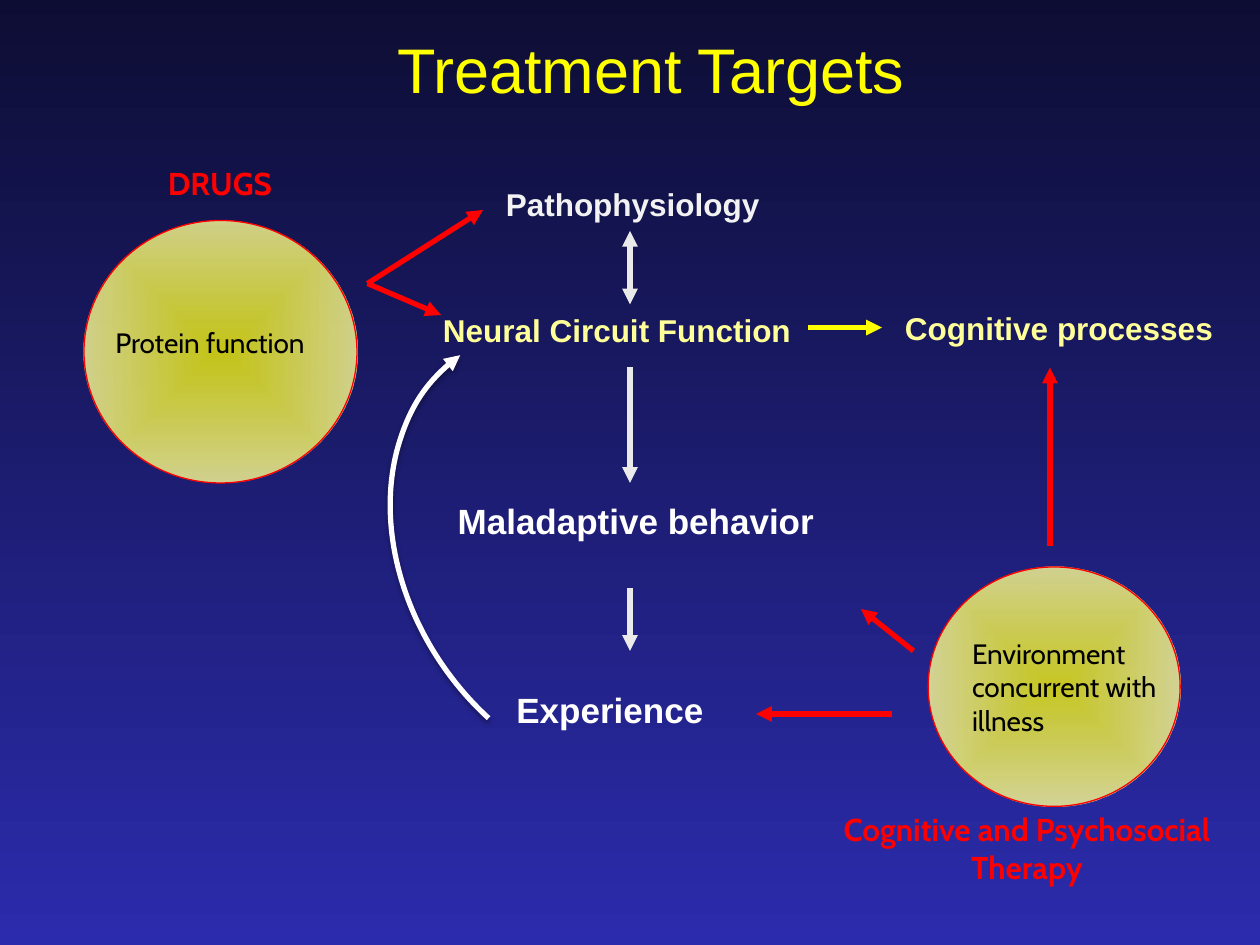
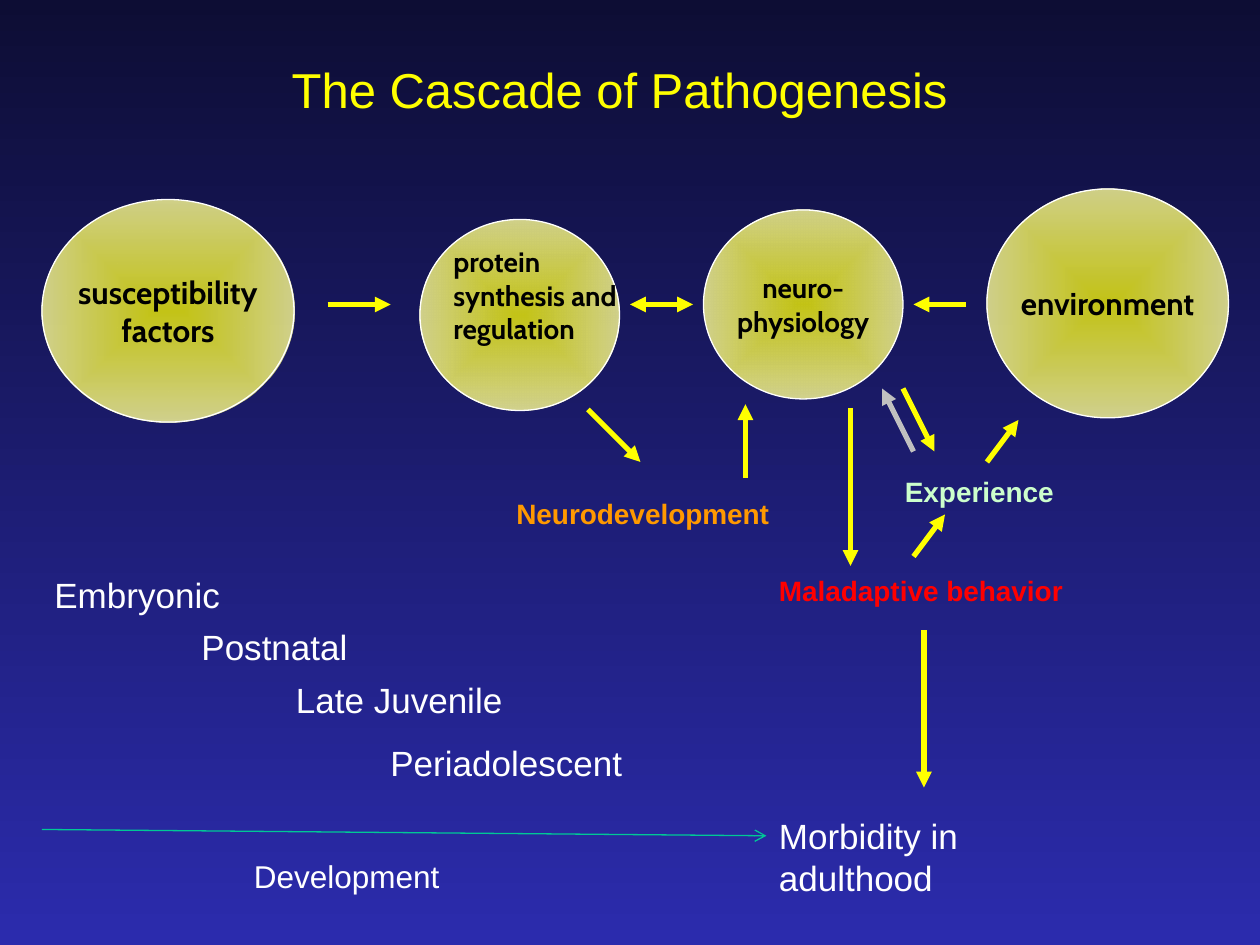
"""Build two slides on treatment targets and the cascade of pathogenesis."""
from dataclasses import dataclass

from pptx import Presentation
from pptx.dml.color import RGBColor
from pptx.enum.shapes import MSO_CONNECTOR, MSO_SHAPE
from pptx.enum.text import MSO_ANCHOR, MSO_AUTO_SIZE, PP_ALIGN
from pptx.oxml import parse_xml
from pptx.oxml.ns import nsdecls, qn
from pptx.util import Emu, Inches, Pt

ELLIPSE, ARC = MSO_SHAPE.OVAL, MSO_SHAPE.ARC
STRAIGHT = MSO_CONNECTOR.STRAIGHT
MIDDLE, TOP = MSO_ANCHOR.MIDDLE, MSO_ANCHOR.TOP
LEFT, CENTER = PP_ALIGN.LEFT, PP_ALIGN.CENTER
GROW = MSO_AUTO_SIZE.SHAPE_TO_FIT_TEXT

SLIDE_WIDTH, SLIDE_HEIGHT = Inches(10), Inches(7.5)
COLUMNS = 120
CELL = SLIDE_WIDTH / COLUMNS
TITLE_SIZE = (108, 15)
COLORS = {
    "night": "0D0D34",
    "indigo": "2B2BAD",
    "yellow": "FFFF00",
    "cream": "FFFF99",
    "red": "FF0000",
    "white": "FFFFFF",
    "mist": "F2F2F2",
    "pale": "EAEAEA",
    "silver": "C0C0C0",
    "orange": "FF9900",
    "mint": "CCFFCC",
    "teal": "00C896",
    "black": "000000",
}


@dataclass(frozen=True)
class Label:
    """Text at a grid place; its height follows from its lines."""

    text: str
    left: float
    top: float
    width: float
    size: int
    color: str = "white"
    bold: bool = True
    font: str = "Arial"
    align: PP_ALIGN = LEFT
    wrap: bool = False
    lines: int = 1


@dataclass(frozen=True)
class Circle:
    """Glowing ellipse with an optional centred caption."""

    left: float
    top: float
    width: float
    height: float
    outline: str
    caption: str = ""
    size: int = 18


@dataclass(frozen=True)
class Arrow:
    """Straight arrow between two grid points."""

    start: tuple[float, float]
    end: tuple[float, float]
    color: str = "yellow"
    double: bool = False
    weight: float = 3
    tip: str = "triangle"


@dataclass(frozen=True)
class Diagram:
    """Everything that stands on one slide."""

    title: str
    title_place: tuple[float, float]
    title_size: int
    circles: list[Circle]
    labels: list[Label]
    arrows: list[Arrow]


TREATMENT = Diagram(
    "Treatment Targets", (8, -1), 36,
    [
        Circle(8, 21, 26, 25, "red"),
        Circle(88.4, 54, 24, 22.8, "red"),
    ],
    [
        Label("Protein function", 9.8, 30.4, 25.1, 16, "black", False, "Cabin", wrap=True),
        Label("Environment\nconcurrent with\nillness", 91.4, 60, 21.6, 16,
              "black", False, "Cabin", lines=3),
        Label("DRUGS", 14.8, 15, 13.2, 18, "red", font="Cabin"),
        Label("Cognitive and Psychosocial\nTherapy", 76, 76.6, 43.6, 18, "red",
              font="Cabin", align=CENTER, lines=2),
        Label("Pathophysiology", 47, 17, 26.9, 18, "mist"),
        Label("Neural Circuit Function", 41, 29, 35.9, 18, "cream"),
        Label("Cognitive processes", 85, 28.8, 32, 18, "cream"),
        Label("Maladaptive behavior", 42.4, 47, 36.6, 20),
        Label("Experience", 48, 65, 20.4, 20),
    ],
    [
        Arrow((35, 27), (46, 20), "red"),
        Arrow((35, 27), (42, 30), "red"),
        Arrow((60, 29), (60, 22), "pale", double=True),
        Arrow((60, 35), (60, 46), "pale"),
        Arrow((60, 56), (60, 62), "pale"),
        Arrow((77, 31.2), (84, 31.2)),
        Arrow((100, 52), (100, 35), "red"),
        Arrow((87, 62), (82, 58), "red"),
        Arrow((85, 68), (72, 68), "red"),
    ],
)

CASCADE = Diagram(
    "The Cascade of Pathogenesis", (5, 1), 28,
    [
        Circle(4, 19, 24, 21.2, "white", "susceptibility\nfactors"),
        Circle(40, 20.9, 19, 18.2, "white"),
        Circle(67, 20, 19, 18, "white", "neuro-\nphysiology", 16),
        Circle(94, 18, 23, 21.8, "white", "environment"),
    ],
    [
        Label("protein synthesis and regulation", 42, 22.7, 18, 16, "black",
              font="Cabin", wrap=True, lines=3),
        Label("Neurodevelopment", 48, 46.7, 27.6, 16, "orange"),
        Label("Experience", 85, 44.6, 16.8, 16, "mint"),
        Label("Maladaptive behavior", 73, 54, 29.5, 16, "red"),
        Label("Embryonic", 4, 54, 19.2, 20, bold=False),
        Label("Postnatal", 18, 59, 17.4, 20, bold=False),
        Label("Late Juvenile", 27, 64, 23.2, 20, bold=False),
        Label("Periadolescent", 36, 70, 25.7, 20, bold=False),
        Label("Morbidity in adulthood", 73, 77, 30, 20, bold=False, wrap=True, lines=2),
        Label("Development", 23, 81, 20.3, 18, bold=False),
    ],
    [
        Arrow((31.2, 29), (37.2, 29)),
        Arrow((60, 29), (66, 29), double=True),
        Arrow((92, 29), (87, 29)),
        Arrow((56, 39), (61, 44)),
        Arrow((71, 45.5), (71, 38.5)),
        Arrow((81, 38.9), (81, 53.9)),
        Arrow((87, 43), (84, 37), "silver"),
        Arrow((86, 37), (89, 43)),
        Arrow((87, 53), (90, 49)),
        Arrow((94, 44), (97, 40)),
        Arrow((88, 60), (88, 75)),
        Arrow((4, 79), (73, 79.6), "teal", weight=0.75, tip="arrow"),
    ],
)


def cells(*counts: float) -> list[Emu]:
    """Turn grid cells into lengths."""
    return [Emu(round(count * CELL)) for count in counts]


def rgb(name: str) -> RGBColor:
    """Look up a named colour."""
    return RGBColor.from_string(COLORS[name])


def apply_format(target, values: dict) -> None:
    """Set each attribute named in the dict."""
    for name, value in values.items():
        setattr(target, name, value)


def write_text(frame, text: str, align: PP_ALIGN, font: dict, color: str) -> None:
    """Fill a text frame, one paragraph a line."""
    frame.text = text
    for paragraph in frame.paragraphs:
        paragraph.alignment = align
        for run in paragraph.runs:
            apply_format(run.font, font)
            run.font.color.rgb = rgb(color)


def set_line(line, color: str, weight: float) -> None:
    """Colour and size a line."""
    line.color.rgb = rgb(color)
    line.width = Pt(weight)


def add_tips(shape, **tips: str) -> None:
    """Put arrowheads on the ends of a line."""
    outline = shape.element.spPr.find(qn("a:ln"))
    for end, kind in tips.items():
        outline.append(parse_xml(f'<a:{end} {nsdecls("a")} type="{kind}"/>'))


def draw_label(slide, label: Label) -> None:
    """Draw a text box."""
    left, top, width = cells(label.left, label.top, label.width)
    height = Inches(0.1) + Pt(1.2 * label.size * label.lines)
    frame = slide.shapes.add_textbox(left, top, width, height).text_frame
    apply_format(frame, {"word_wrap": label.wrap, "auto_size": GROW, "vertical_anchor": TOP})
    font = {"name": label.font, "size": Pt(label.size), "bold": label.bold}
    write_text(frame, label.text, label.align, font, label.color)


def draw_circle(slide, circle: Circle) -> None:
    """Draw an ellipse that fades from its centre."""
    place = cells(circle.left, circle.top, circle.width, circle.height)
    shape = slide.shapes.add_shape(ELLIPSE, *place)
    stops = "".join(
        f'<a:gs pos="{position}"><a:srgbClr val="{COLORS[color]}">'
        f'<a:alpha val="{alpha}"/></a:srgbClr></a:gs>'
        for position, color, alpha in ((0, "yellow", 74000), (100000, "cream", 80000))
    )
    shape.element.spPr.append(parse_xml(
        f'<a:gradFill {nsdecls("a")} rotWithShape="1"><a:gsLst>{stops}</a:gsLst>'
        '<a:path path="shape"><a:fillToRect l="50000" t="50000" r="50000" b="50000"/>'
        '</a:path></a:gradFill>'
    ))
    set_line(shape.line, circle.outline, 0.75)
    shape.shadow.inherit = False
    if circle.caption:
        apply_format(shape.text_frame, {"word_wrap": False, "vertical_anchor": MIDDLE})
        font = {"name": "Cabin", "size": Pt(circle.size), "bold": True}
        write_text(shape.text_frame, circle.caption, CENTER, font, "black")


def draw_arrow(slide, arrow: Arrow) -> None:
    """Draw a straight arrow."""
    connector = slide.shapes.add_connector(STRAIGHT, *cells(*arrow.start, *arrow.end))
    set_line(connector.line, arrow.color, arrow.weight)
    tips = {"headEnd": arrow.tip} if arrow.double else {}
    add_tips(connector, **tips, tailEnd=arrow.tip)
    connector.element.spPr.append(parse_xml(f'<a:effectLst {nsdecls("a")}/>'))


def draw_feedback(slide) -> None:
    """Draw the curve from experience back to the neural circuit."""
    curve = slide.shapes.add_shape(ARC, *cells(39, 29.4, 37.2, 47.2))
    curve.adjustments[0], curve.adjustments[1] = 162, 11.155
    curve.rotation = 324.3
    curve.element.spPr.xfrm.set("flipH", "1")
    curve.fill.background()
    set_line(curve.line, "white", 3)
    add_tips(curve, headEnd="triangle")
    curve.shadow.inherit = False
    curve.element.spPr.find(qn("a:effectLst")).append(parse_xml(
        f'<a:outerShdw {nsdecls("a")} blurRad="{Pt(3.1)}" dist="{Pt(1.8)}" dir="5400000" '
        f'rotWithShape="0"><a:srgbClr val="{COLORS["black"]}"><a:alpha val="35000"/>'
        '</a:srgbClr></a:outerShdw>'
    ))


def add_diagram(deck, diagram: Diagram):
    """Add a slide with its background, title and parts."""
    slide = deck.slides.add_slide(deck.slide_layouts.get_by_name("Title Only"))
    backdrop = slide.background.fill
    backdrop.gradient()
    backdrop.gradient_angle = 270
    for stop, color in zip(backdrop.gradient_stops, ("night", "indigo")):
        stop.color.rgb = rgb(color)
    title = slide.shapes.title
    place = cells(*diagram.title_place, *TITLE_SIZE)
    apply_format(title, dict(zip(("left", "top", "width", "height"), place)))
    title.text_frame.vertical_anchor = MIDDLE
    font = {"name": "Arial", "size": Pt(diagram.title_size), "bold": False}
    write_text(title.text_frame, diagram.title, CENTER, font, "yellow")
    for parts, draw in ((diagram.circles, draw_circle), (diagram.labels, draw_label),
                        (diagram.arrows, draw_arrow)):
        for part in parts:
            draw(slide, part)
    return slide


def main() -> None:
    """Build and save the deck."""
    deck = Presentation()
    apply_format(deck, {"slide_width": SLIDE_WIDTH, "slide_height": SLIDE_HEIGHT})
    draw_feedback(add_diagram(deck, TREATMENT))
    add_diagram(deck, CASCADE)
    deck.save("out.pptx")


if __name__ == "__main__":
    main()
